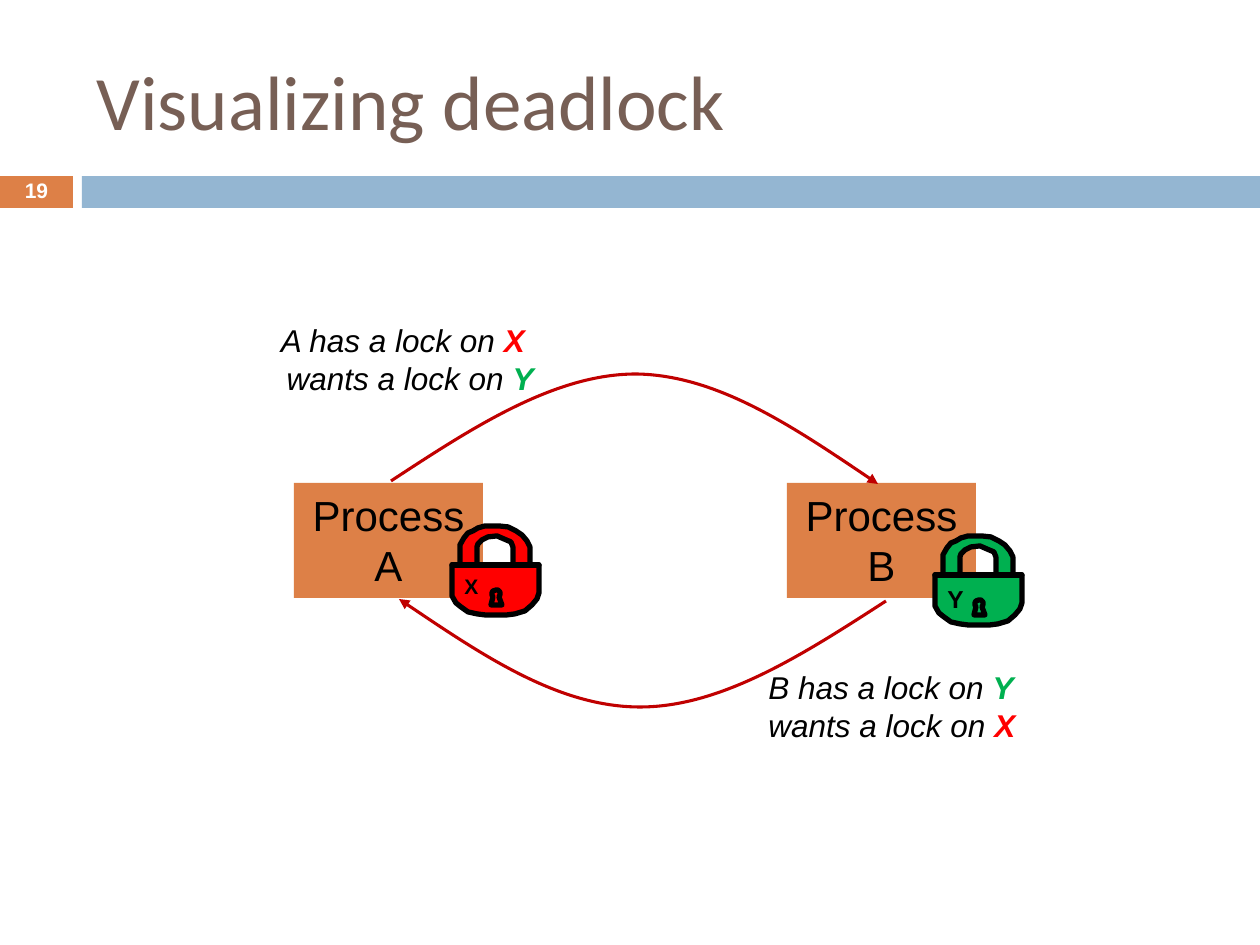
"""Build the slide that shows two processes deadlocked over two locks."""
from dataclasses import dataclass
from typing import Any, NamedTuple, Optional

from lxml import etree
from pptx import Presentation
from pptx import util as u
from pptx.dml.color import RGBColor
from pptx.enum import shapes, text
from pptx.oxml.ns import qn

PX = 914400 / 126


@dataclass(frozen=True)
class Theme:
    accent: str = "DD8047"
    band: str = "94B6D2"
    title: str = "775F55"
    arrow: str = "C00000"
    x_lock: str = "FF0000"
    y_lock: str = "00B050"
    black: str = "000000"
    white: str = "FFFFFF"
    title_size: int = 44
    process_size: int = 24
    label_size: int = 18
    number_size: int = 12
    arrow_width: float = 1.75
    lock_width: float = 3


THEME = Theme()


class Box(NamedTuple):
    left: int
    top: int
    width: int
    height: int


class Point(NamedTuple):
    x: int
    y: int


class Run(NamedTuple):
    words: str
    color: str = THEME.black
    bold: bool = False


@dataclass(frozen=True)
class Process:
    name: str
    box: Box


@dataclass(frozen=True)
class Lock:
    name: str
    color: str
    size: int
    origin: Point


@dataclass(frozen=True)
class Label:
    lines: tuple[tuple[Run, ...], ...]
    box: Box
    align: Any


X, Y = Run("X", THEME.x_lock, True), Run("Y", THEME.y_lock, True)
BANDS = ((Box(0, 176, 73, 32), THEME.accent), (Box(82, 176, 1178, 32), THEME.band))
PROCESSES = (
    Process("Process A", Box(294, 483, 189, 115)),
    Process("Process B", Box(787, 483, 189, 115)),
)
LOCKS = (
    Lock("X", THEME.x_lock, 12, Point(452, 526)),
    Lock("Y", THEME.y_lock, 14, Point(935, 536)),
)
LABELS = (
    Label(((Run("A has a lock on "), X._replace(words="X ")), (Run("wants a lock on "), Y)),
          Box(84, 315, 462, 89), text.PP_ALIGN.RIGHT),
    Label(((Run("B has a lock on "), Y._replace(words="Y ")), (Run("wants a lock on "), X)),
          Box(756, 662, 462, 89), text.PP_ALIGN.LEFT),
)
ARROWS = (
    ((391, 481), (472, 428), (554, 374), (636, 374), (717, 375), (798, 430), (878, 484)),
    ((886, 601), (804, 654), (722, 707), (640, 707), (559, 707), (479, 653), (399, 599)),
)
BODY = (
    (0, 39), (8, 39), (8, 19), (12, 12), (16, 7), (21, 5), (26, 2), (33, 0), (47, 0),
    (56, 1), (64, 5), (70, 9), (75, 15), (78, 21), (78, 39), (87, 39), (87, 67),
    (85, 73), (80, 79), (73, 85), (63, 88), (55, 89), (33, 89), (25, 88), (16, 86),
    (9, 81), (4, 77), (0, 70),
)
SHACKLE = (
    (25, 39), (25, 21), (26, 18), (30, 14), (36, 11), (45, 10), (52, 13), (59, 16),
    (61, 21), (61, 39),
)
SEAM = ((0, 39), (87, 39))
KEYHOLE = (
    (47, 71), (50, 79), (39, 79), (41, 71), (40, 69), (40, 67), (41, 65), (44, 64),
    (46, 64), (48, 66), (48, 69),
)


def px(length: float) -> u.Emu:
    return u.Emu(round(length * PX))


def place(box: Box) -> list[u.Emu]:
    return [px(length) for length in box]


def apply(target: Any, values: dict[str, Any]) -> None:
    for name, value in values.items():
        setattr(target, name, value)


def add_run(paragraph: Any, run: Run, size: int, **values: Any) -> None:
    part = paragraph.add_run()
    part.text = run.words
    apply(part.font, {"name": "Arial", "size": u.Pt(size), "bold": run.bold, **values})
    part.font.color.rgb = RGBColor.from_string(run.color)


def style(shape: Any, fill: Optional[str], line: Optional[str] = None, width: float = 0) -> None:
    shape.shadow.inherit = False
    if fill:
        shape.fill.solid()
        shape.fill.fore_color.rgb = RGBColor.from_string(fill)
    else:
        shape.fill.background()
    if line:
        shape.line.color.rgb = RGBColor.from_string(line)
        shape.line.width = u.Pt(width)
    else:
        shape.line.fill.background()


def add_rectangle(slide: Any, box: Box, fill: str) -> Any:
    shape = slide.shapes.add_shape(shapes.MSO_SHAPE.RECTANGLE, *place(box))
    style(shape, fill)
    return shape


def add_outline(slide: Any, contours: tuple, origin: Point = Point(0, 0), close: bool = True) -> Any:
    builder = slide.shapes.build_freeform(*contours[0][0], scale=PX)
    builder.add_line_segments(contours[0][1:], close=close)
    for start, *rest in contours[1:]:
        builder.move_to(*start)
        builder.add_line_segments(rest, close=close)
    return builder.convert_to_shape(px(origin.x), px(origin.y))


def add_curved_arrow(slide: Any, points: tuple) -> None:
    shape = add_outline(slide, (points,), close=False)
    style(shape, None, THEME.arrow, THEME.arrow_width)
    segments = list(shape._element.iter(qn("a:lnTo")))
    for first in range(0, len(segments), 3):
        curve = etree.Element(qn("a:cubicBezTo"))
        segments[first].addprevious(curve)
        for segment in segments[first:first + 3]:
            curve.append(segment[0])
            segment.getparent().remove(segment)
    etree.SubElement(shape.line._get_or_add_ln(), qn("a:tailEnd"), type="triangle")


def add_process(slide: Any, process: Process) -> None:
    shape = add_rectangle(slide, process.box, THEME.accent)
    apply(shape.text_frame, {"word_wrap": True, "vertical_anchor": text.MSO_ANCHOR.TOP})
    paragraph = shape.text_frame.paragraphs[0]
    paragraph.alignment = text.PP_ALIGN.CENTER
    add_run(paragraph, Run(process.name), THEME.process_size)


def add_lock(slide: Any, lock: Lock) -> None:
    body, keyhole = (add_outline(slide, contours, lock.origin)
                     for contours in ((BODY, SHACKLE, SEAM), (KEYHOLE,)))
    for shape in (body, keyhole):
        style(shape, lock.color, THEME.black, THEME.lock_width)
    apply(body.text_frame, {"margin_top": px(48), "margin_bottom": 0,
                            "vertical_anchor": text.MSO_ANCHOR.TOP})
    paragraph = body.text_frame.paragraphs[0]
    paragraph.alignment = text.PP_ALIGN.LEFT
    add_run(paragraph, Run(lock.name, bold=True), lock.size)


def add_label(slide: Any, label: Label) -> None:
    frame = slide.shapes.add_textbox(*place(label.box)).text_frame
    frame.word_wrap = True
    paragraph = frame.paragraphs[0]
    paragraph.alignment = label.align
    for index, line in enumerate(label.lines):
        if index:
            paragraph.add_line_break()
        for run in line:
            add_run(paragraph, run, THEME.label_size, italic=True)


def add_heading(slide: Any) -> None:
    title = slide.shapes.title
    apply(title, dict(zip(Box._fields, place(Box(84, 32, 1124, 136)))))
    title.text_frame.vertical_anchor = text.MSO_ANCHOR.MIDDLE
    paragraph = title.text_frame.paragraphs[0]
    paragraph.alignment = text.PP_ALIGN.LEFT
    add_run(paragraph, Run("Visualizing deadlock", THEME.title), THEME.title_size, name="Calibri")
    number, _ = [add_rectangle(slide, box, fill) for box, fill in BANDS]
    apply(number.text_frame, {"vertical_anchor": text.MSO_ANCHOR.MIDDLE,
                              "margin_top": 0, "margin_bottom": 0})
    paragraph = number.text_frame.paragraphs[0]
    apply(paragraph, {"alignment": text.PP_ALIGN.CENTER, "line_spacing": 0.8})
    add_run(paragraph, Run("19", THEME.white, True), THEME.number_size)


def main() -> None:
    presentation = Presentation()
    apply(presentation, {"slide_width": px(1260), "slide_height": px(945)})
    slide = presentation.slides.add_slide(presentation.slide_layouts[5])
    add_heading(slide)
    for draw, items in ((add_process, PROCESSES), (add_curved_arrow, ARROWS),
                        (add_lock, LOCKS), (add_label, LABELS)):
        for item in items:
            draw(slide, item)
    presentation.save("out.pptx")


if __name__ == "__main__":
    main()
